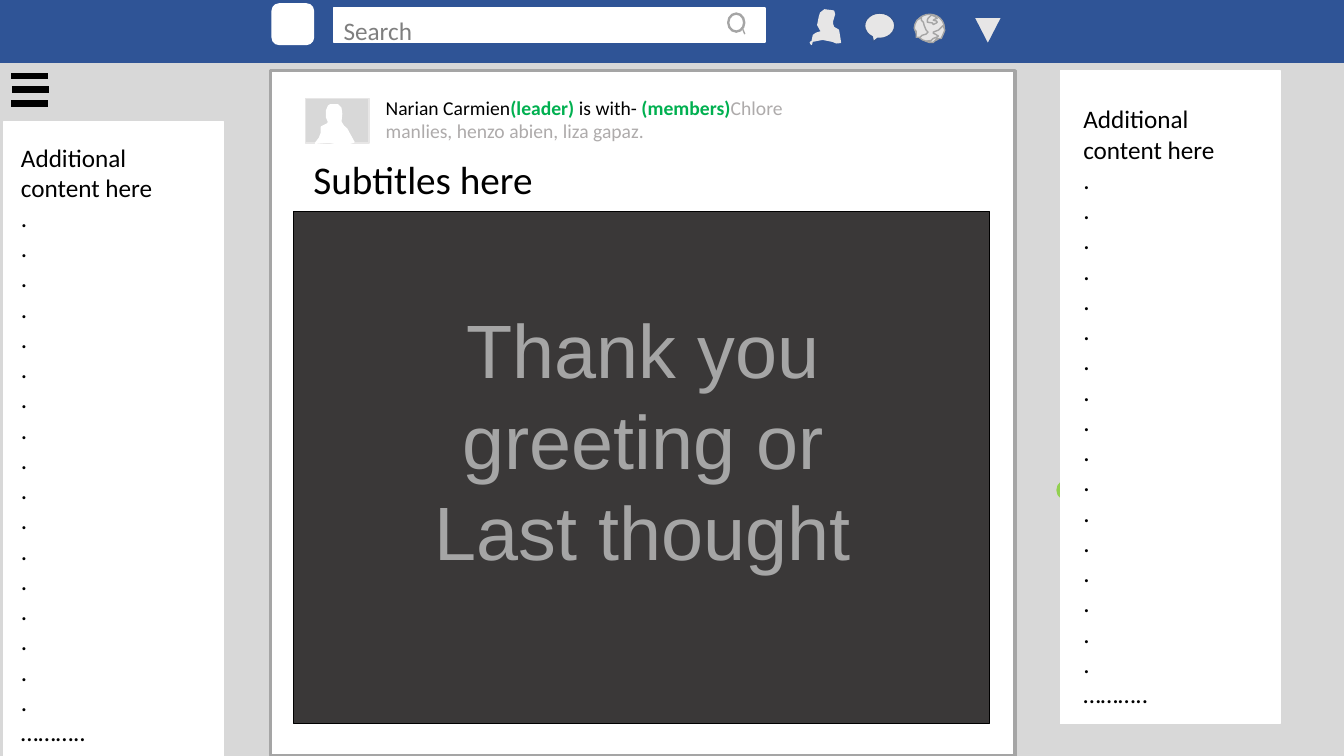
from dataclasses import dataclass
from typing import Any

import pptx
import pptx.dml.color
import pptx.enum.shapes
import pptx.enum.text
import pptx.oxml
import pptx.oxml.ns
import pptx.util

Cm = pptx.util.Cm
Pt = pptx.util.Pt
Kind = pptx.enum.shapes.MSO_SHAPE
Align = pptx.enum.text.PP_ALIGN

WHITE, BLACK, NAVY, GREEN = "FFFFFF", "000000", "2F5496", "00B050"
PAGE_GREY, ICON_GREY, LINE_GREY, MUTED_GREY = "D8D8D8", "E7E6E6", "A5A5A5", "AEABAB"


@dataclass
class Box:
    """Lengths are centimetres; line_width is points."""
    left: float
    top: float
    width: float
    height: float
    fill: str = WHITE
    line: str | None = None
    line_width: float = 1
    kind: Any = Kind.RECTANGLE
    adjustments: tuple[float, ...] = ()
    rotation: float = 0


@dataclass
class Run:
    text: str
    size: float
    color: str = BLACK
    bold: bool = False
    font: str = "Calibri"


@dataclass
class Outline:
    """Points are hundredths of a centimetre."""
    points: list[tuple[int, int]]
    line: str


@dataclass
class Sidebar:
    panel: Box
    text_left: float
    text_top: float


def rgb(color: str) -> pptx.dml.color.RGBColor:
    return pptx.dml.color.RGBColor.from_string(color)


def paint(shape: Any, fill: str, line: str | None, width: float = 1) -> None:
    shape.shadow.inherit = False
    shape.fill.solid()
    shape.fill.fore_color.rgb = rgb(fill)
    if line is None:
        shape.line.fill.background()
    else:
        shape.line.color.rgb = rgb(line)
        shape.line.width = Pt(width)


def add_box(shapes: Any, box: Box) -> Any:
    shape = shapes.add_shape(box.kind, Cm(box.left), Cm(box.top), Cm(box.width), Cm(box.height))
    for index, value in enumerate(box.adjustments):
        shape.adjustments[index] = value
    shape.rotation = box.rotation
    paint(shape, box.fill, box.line, box.line_width)
    return shape


def add_outline(shapes: Any, outline: Outline, fill: str) -> None:
    builder = shapes.build_freeform(*outline.points[0], scale=Cm(0.01))
    builder.add_line_segments(outline.points[1:], close=True)
    paint(builder.convert_to_shape(), fill, outline.line)


def add_line(shapes: Any, start: tuple[float, float], end: tuple[float, float],
             color: str, width: float) -> None:
    connector = shapes.add_connector(pptx.enum.shapes.MSO_CONNECTOR.STRAIGHT,
                                     *(Cm(length) for length in start + end))
    connector.line.color.rgb = rgb(color)
    connector.line.width = Pt(width)
    properties = connector._element.spPr
    properties.append(pptx.oxml.parse_xml(f"<a:effectLst {pptx.oxml.ns.nsdecls('a')}/>"))


def write(shape: Any, paragraphs: list[list[Run]], alignment: Any = Align.LEFT) -> None:
    frame = shape.text_frame
    frame.word_wrap = True
    frame.auto_size = pptx.enum.text.MSO_AUTO_SIZE.SHAPE_TO_FIT_TEXT
    frame.vertical_anchor = pptx.enum.text.MSO_ANCHOR.TOP
    for index, runs in enumerate(paragraphs):
        paragraph = frame.add_paragraph() if index else frame.paragraphs[0]
        paragraph.alignment = alignment
        for item in runs:
            run = paragraph.add_run()
            run.text = item.text
            run.font.name = item.font
            run.font.size = Pt(item.size)
            run.font.bold = item.bold
            run.font.color.rgb = rgb(item.color)


def add_text(shapes: Any, left: float, top: float, width: float, height: float,
             paragraphs: list[list[Run]], alignment: Any = Align.LEFT) -> None:
    write(shapes.add_textbox(Cm(left), Cm(top), Cm(width), Cm(height)), paragraphs, alignment)


def add_sidebar(shapes: Any, sidebar: Sidebar) -> None:
    add_box(shapes, sidebar.panel)
    lines = ["Additional content here"] + ["."] * 17 + ["………..",]
    add_text(shapes, sidebar.text_left, sidebar.text_top, 4.95, 15.65,
             [[Run(line, 18)] for line in lines])


AVATAR = Outline([
    (795, 361), (805, 348), (810, 335), (810, 320), (826, 312), (828, 307), (823, 295),
    (823, 279), (828, 267), (833, 264), (851, 264), (859, 272), (861, 287), (859, 307),
    (866, 318), (874, 325), (881, 338), (892, 358), (866, 366), (843, 361), (828, 358)], WHITE)
FRIEND_ICON = Outline([
    (2045, 112), (2050, 89), (2057, 84), (2073, 79), (2068, 76), (2061, 63), (2065, 43),
    (2068, 33), (2078, 25), (2101, 28), (2103, 36), (2098, 53), (2098, 61), (2101, 69),
    (2113, 76), (2116, 94), (2118, 107), (2108, 108), (2098, 104), (2073, 99), (2047, 104),
    (2042, 107)], ICON_GREY)
CONTINENTS = [
    Outline([(2322, 43), (2322, 51), (2327, 56), (2329, 64), (2334, 76), (2339, 81),
             (2334, 86), (2324, 89), (2319, 94), (2309, 94), (2309, 79), (2306, 76),
             (2304, 71), (2306, 61), (2311, 51), (2319, 46)], LINE_GREY),
    Outline([(2347, 38), (2339, 46), (2337, 51), (2337, 56), (2350, 58), (2352, 62),
             (2360, 58), (2362, 56), (2360, 53), (2352, 51), (2357, 48), (2362, 46),
             (2355, 41)], LINE_GREY),
    Outline([(2377, 64), (2372, 69), (2365, 76), (2357, 79), (2352, 81), (2352, 84),
             (2357, 86), (2365, 91), (2360, 94), (2352, 97), (2347, 102), (2334, 104),
             (2342, 107), (2352, 107), (2362, 97), (2372, 97), (2377, 86), (2381, 76)],
            LINE_GREY),
]
SIDEBARS = [
    Sidebar(Box(26.72, 1.78, 5.54, 16.46, line=WHITE), 27.05, 2.49),
    Sidebar(Box(0.1, 3.07, 5.54, 15.98, line=WHITE), 0.28, 3.45),
]


def add_post(shapes: Any) -> None:
    add_box(shapes, Box(6.81, 1.78, 18.77, 17.27, line=LINE_GREY, line_width=2.25))
    add_box(shapes, Box(7.7, 2.49, 1.6, 1.12, PAGE_GREY, ICON_GREY))
    add_outline(shapes, AVATAR, WHITE)
    write(add_box(shapes, Box(7.65, 3.78, 14.91, 1.45)), [[Run("Subtitles here", 28)]])
    write(add_box(shapes, Box(9.47, 2.29, 11.84, 1.45)), [[
        Run("Narian Carmien", 14),
        Run("(leader) ", 14, GREEN, True),
        Run("is with- ", 14),
        Run("(members)", 14, GREEN, True),
        Run("Chlore manlies, henzo abien, liza gapaz.", 14, MUTED_GREY)]])
    add_box(shapes, Box(7.39, 5.33, 17.55, 12.9, "3A3838", BLACK))
    add_text(shapes, 8.53, 7.52, 15.34, 7.19,
             [[Run(line, 54, LINE_GREY, font="Arial")]
              for line in ("Thank you greeting or", "Last thought")], Align.CENTER)


def add_top_bar(shapes: Any) -> None:
    add_box(shapes, Box(0, 0, 33.87, 1.57, NAVY, NAVY))
    add_box(shapes, Box(6.86, 0.1, 1.04, 1.02, line=WHITE,
                        kind=Kind.ROUNDED_RECTANGLE, adjustments=(0.17,)))
    add_box(shapes, Box(8.41, 0.2, 10.87, 0.86, line=WHITE))
    add_text(shapes, 8.41, 0.25, 5.16, 1.02, [[Run("Search", 18, "7F7F7F")]])
    add_box(shapes, Box(18.34, 0.33, 0.43, 0.48, MUTED_GREY, LINE_GREY,
                        kind=Kind.DONUT, adjustments=(0.06,)))
    add_line(shapes, (18.72, 0.74), (18.77, 0.86), LINE_GREY, 1)
    add_outline(shapes, FRIEND_ICON, ICON_GREY)
    add_box(shapes, Box(21.79, 0.33, 0.76, 0.64, ICON_GREY, "31538F",
                        kind=Kind.OVAL_CALLOUT, adjustments=(-0.21, 0.63)))
    globe = shapes.add_group_shape().shapes
    add_box(globe, Box(23.06, 0.36, 0.74, 0.69, ICON_GREY, LINE_GREY, kind=Kind.OVAL))
    for continent in CONTINENTS:
        add_outline(globe, continent, ICON_GREY)
    add_box(shapes, Box(24.54, 0.43, 0.71, 0.69, ICON_GREY, NAVY,
                        kind=Kind.ISOSCELES_TRIANGLE, rotation=180))


def main() -> None:
    presentation = pptx.Presentation()
    presentation.slide_width, presentation.slide_height = Cm(33.87), Cm(19.05)
    slide = presentation.slides.add_slide(presentation.slide_layouts[6])
    slide.background.fill.solid()
    slide.background.fill.fore_color.rgb = rgb(PAGE_GREY)
    shapes = slide.shapes
    add_post(shapes)
    add_box(shapes, Box(26.64, 12.12, 0.41, 0.46, "92D050", "92D050", kind=Kind.OVAL))
    add_top_bar(shapes)
    for row, left in enumerate((0.28, 0.3, 0.28)):
        y = 1.91 + 0.35 * row
        add_line(shapes, (left, y), (left + 0.94, y), BLACK, 4.5)
    for sidebar in SIDEBARS:
        add_sidebar(shapes, sidebar)
    presentation.save("out.pptx")


if __name__ == "__main__":
    main()
